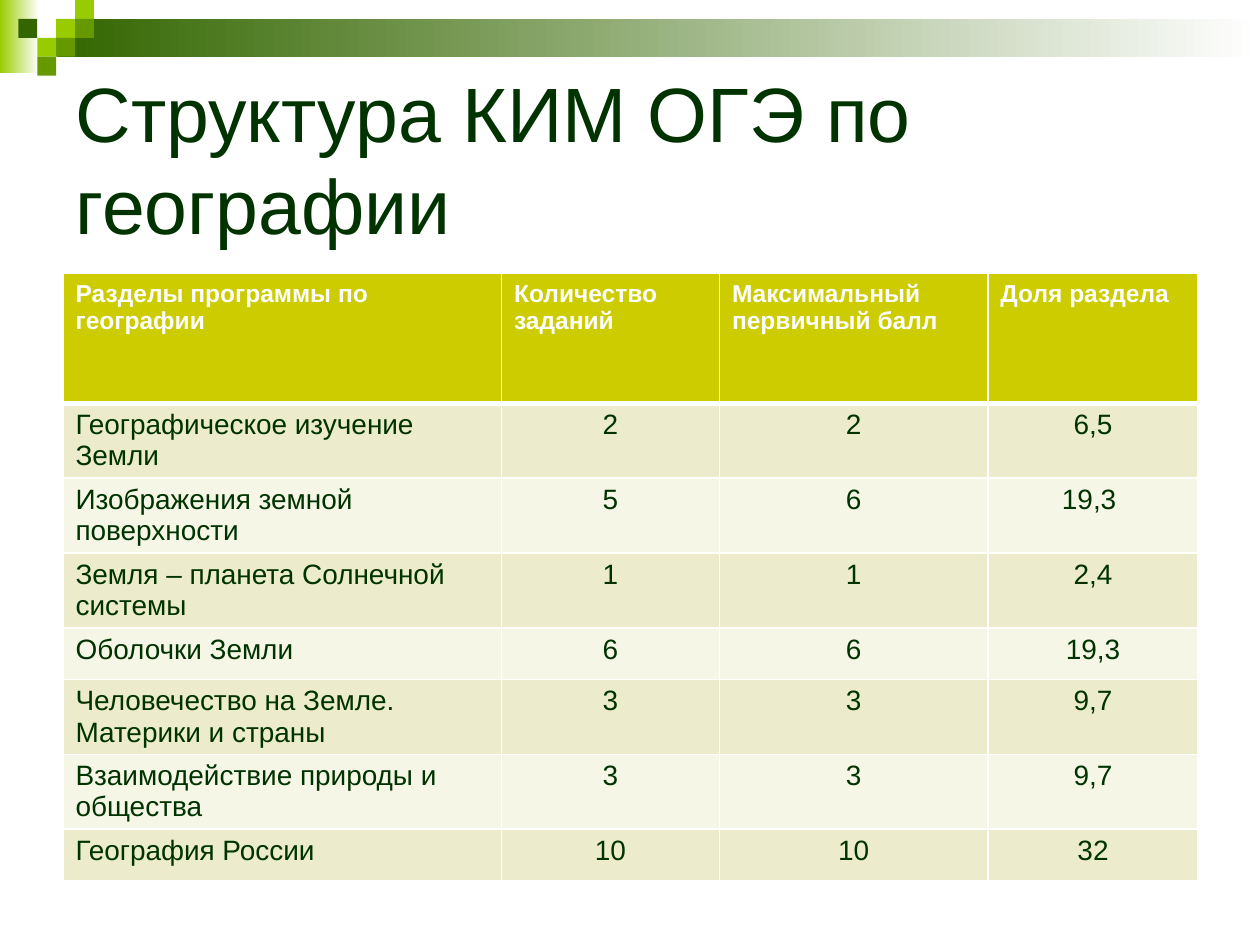
import pptx
import pptx.util
import pptx.dml.color
import pptx.enum.shapes
import pptx.enum.text
import pptx.oxml
import pptx.oxml.ns

Inches = pptx.util.Inches
Pt = pptx.util.Pt
Align = pptx.enum.text.PP_ALIGN
Anchor = pptx.enum.text.MSO_ANCHOR

COLORS = {
    "white": "FFFFFF",
    "lime": "99CC00",
    "leaf": "669900",
    "moss": "336600",
    "ink": "003300",
    "head": "CCCC00",
    "dark": "ECECCC",
    "light": "F6F6E7",
}

HEADS = ["Разделы программы по географии", "Количество заданий",
         "Максимальный первичный балл", "Доля раздела"]
ROWS = [
    ["Географическое изучение\nЗемли", "2", "2", "6,5"],
    ["Изображения земной поверхности", "5", "6", "19,3 "],
    ["Земля – планета Солнечной системы", "1", "1", "2,4"],
    ["Оболочки Земли", "6", "6", "19,3"],
    ["Человечество на Земле. Материки и страны", "3", "3", "9,7"],
    ["Взаимодействие природы и общества", "3", "3", "9,7"],
    ["География России", "10", "10", "32"],
]
WIDTHS = [3.48, 1.73, 2.13, 1.67]
TILES = [(2, 1, "lime"), (3, 0, "lime"), (3, 1, "leaf"), (1, 2, "lime"),
         (0, 1, "moss"), (2, 2, "leaf"), (1, 3, "leaf")]


def color(name):
    return pptx.dml.color.RGBColor.from_string(COLORS[name])


def write(frame, text, size=16, tint="ink", bold=False, align=Align.LEFT):
    frame.word_wrap = True
    frame.text = text
    for para in frame.paragraphs:
        para.alignment = align
        for run in para.runs:
            run.font.name = "Arial"
            run.font.size = Pt(size)
            run.font.bold = bold
            run.font.color.rgb = color(tint)


def block(slide, left, top, width, height, tint, fade=False):
    shape = slide.shapes.add_shape(
        pptx.enum.shapes.MSO_SHAPE.RECTANGLE,
        Inches(left), Inches(top), Inches(width), Inches(height))
    shape.shadow.inherit = False
    shape.line.fill.background()
    if fade:
        shape.fill.gradient()
        shape.fill.gradient_angle = 0
        for stop, name, place in zip(shape.fill.gradient_stops, (tint, "white"), (0, 1)):
            stop.color.rgb = color(name)
            stop.position = place
    else:
        shape.fill.solid()
        shape.fill.fore_color.rgb = color(tint)


def banner(slide, left, top, width):
    side = 0.15
    block(slide, left, top, 0.31, 0.58, "lime", fade=True)
    block(slide, left + 3 * side, top + side, width - 3 * side, 2 * side, "moss", fade=True)
    for col, row, tint in TILES:
        block(slide, left + 0.15 + (col - 0.03) * side, top + row * side, side, side, tint)


def heading(slide, left, top, width, height):
    title = slide.shapes.title
    title.left, title.top = Inches(left), Inches(top)
    title.width, title.height = Inches(width), Inches(height)
    write(title.text_frame, "Структура КИМ ОГЭ по географии", size=44)
    title.text_frame.auto_size = pptx.enum.text.MSO_AUTO_SIZE.NONE
    title.text_frame.vertical_anchor = Anchor.MIDDLE
    title.element.getparent().append(title.element)


def border(cell, top, bottom):
    props = cell._tc.get_or_add_tcPr()
    for side, size in (("L", 1), ("R", 1), ("T", top), ("B", bottom)):
        props.append(pptx.oxml.parse_xml(
            f'<a:ln{side} {pptx.oxml.ns.nsdecls("a")} w="{Pt(size)}">'
            f'<a:solidFill><a:srgbClr val="{COLORS["white"]}"/></a:solidFill>'
            f'</a:ln{side}>'))


def grid(slide, left, top, width, height):
    data = [HEADS] + ROWS
    table = slide.shapes.add_table(
        len(data), len(HEADS), Inches(left), Inches(top),
        Inches(width), Inches(height)).table
    table.horz_banding = False
    for col, size in zip(table.columns, WIDTHS):
        col.width = Inches(size)
    for r, texts in enumerate(data):
        table.rows[r].height = Inches(0.41 if r else 1.03)
        tint = ("light" if r % 2 == 0 else "dark") if r else "head"
        for c, text in enumerate(texts):
            cell = table.cell(r, c)
            border(cell, 3 if r == 1 else 1, 1 if r else 3)
            cell.fill.solid()
            cell.fill.fore_color.rgb = color(tint)
            if r:
                write(cell.text_frame, text, align=Align.CENTER if c else Align.LEFT)
            else:
                write(cell.text_frame, text, size=14, tint="white", bold=True)


def main():
    deck = pptx.Presentation()
    deck.slide_width, deck.slide_height = Inches(10), Inches(7.5)
    slide = deck.slides.add_slide(deck.slide_layouts[5])
    banner(slide, 0, 0, 10)
    heading(slide, 0.5, 0.5, 9, 1.5)
    grid(slide, 0.5, 2.17, 9, 3.9)
    deck.save("out.pptx")


if __name__ == "__main__":
    main()
